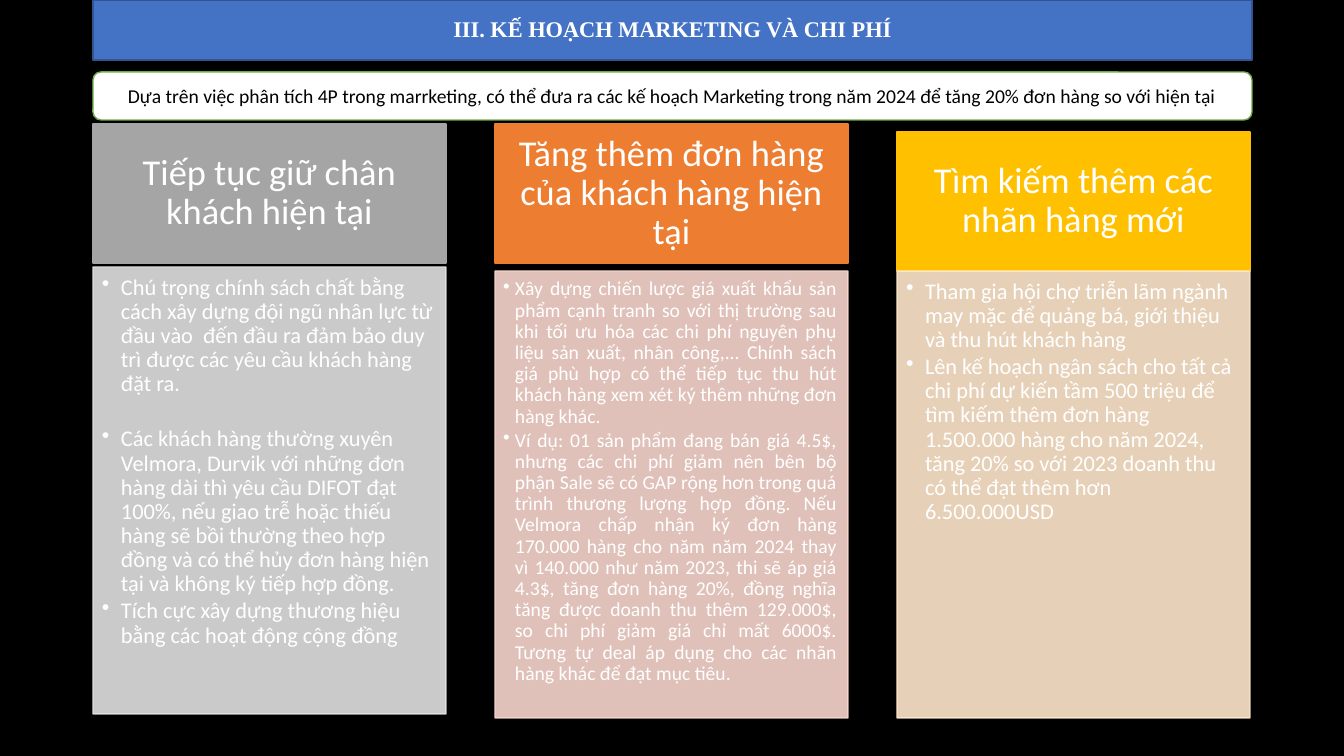
from lxml.etree import SubElement
from pptx import Presentation
from pptx.dml.color import RGBColor
from pptx.enum.shapes import MSO_SHAPE
from pptx.enum.text import MSO_ANCHOR, PP_ALIGN
from pptx.oxml.ns import qn
from pptx.util import Emu, Pt

COLORS = {
    "background": "000000", "white": "FFFFFF", "black": "000000",
    "blue": "4472C4", "blue_line": "325491", "green": "70AD47",
    "gray": "A5A5A5", "gray_light": "E1E1E1",
    "orange": "ED7D31", "orange_light": "F8D7CE",
    "gold": "FFC000", "gold_light": "FFE8CC",
}
SCALE = 914400 / 100.8


def px(length):
    return Emu(round(length * SCALE))


def add_box(kind, box, fill, line, insets, anchor, paragraphs, size, color="white",
            font="Calibri", bold=False, align=PP_ALIGN.CENTER, spacing=0.9):
    shape = slide.shapes.add_shape(kind, *[px(length) for length in box])
    shape.shadow.inherit = False
    shape.fill.solid()
    shape.fill.fore_color.rgb = RGBColor.from_string(COLORS[fill])
    shape.line.color.rgb = RGBColor.from_string(COLORS[line])
    shape.line.width = Pt(1)
    frame = shape.text_frame
    frame.word_wrap = True
    frame.vertical_anchor = anchor
    (frame.margin_left, frame.margin_top,
     frame.margin_right, frame.margin_bottom) = [px(inset) for inset in insets]
    for index, text in enumerate(paragraphs):
        paragraph = frame.add_paragraph() if index else frame.paragraphs[0]
        paragraph.alignment = align
        paragraph.line_spacing = spacing
        run = paragraph.add_run()
        run.text = text
        run.font.size = Pt(size)
        run.font.name = font
        run.font.bold = bold
        run.font.color.rgb = RGBColor.from_string(COLORS[color])
    return shape


presentation = Presentation()
presentation.slide_width = px(1344)
presentation.slide_height = px(756)
slide = presentation.slides.add_slide(presentation.slide_layouts[6])
slide.background.fill.solid()
slide.background.fill.fore_color.rgb = RGBColor.from_string(COLORS["background"])

# Title bar and introduction
LEFT, WIDTH = 93, 1159
add_box(MSO_SHAPE.RECTANGLE, (LEFT, 0, WIDTH, 60), "blue", "blue_line", (10, 5, 10, 5),
        MSO_ANCHOR.MIDDLE, ["III. KẾ HOẠCH MARKETING VÀ CHI PHÍ"], 16,
        font="Times New Roman", bold=True)
add_box(MSO_SHAPE.ROUNDED_RECTANGLE, (LEFT, 72, WIDTH, 48), "white", "green", (10, 5, 10, 5),
        MSO_ANCHOR.MIDDLE,
        ["Dựa trên việc phân tích 4P trong marrketing, có thể đưa ra các kế hoạch Marketing "
         "trong năm 2024 để tăng 20% đơn hàng so với hiện tại"],
        14, color="black", spacing=1.0)

# Columns: color, header top, body top, text size, indent, insets, alignment,
# space after the first point, heading, points
columns = [
    ("gray", 124, 267, 16, 19, (9, 9, 12, 14), PP_ALIGN.LEFT, 22,
     "Tiếp tục giữ chân khách hiện tại",
     ["Chú trọng chính sách chất bằng cách xây dựng đội ngũ nhân lực từ đầu vào  đến đầu ra "
      "đảm bảo duy trì được các yêu cầu khách hàng đặt ra.",
      "Các khách hàng thường xuyên Velmora, Durvik với những đơn hàng dài thì yêu cầu DIFOT đạt "
      "100%, nếu giao trễ hoặc thiếu hàng sẽ bồi thường theo hợp đồng và có thể hủy đơn hàng "
      "hiện tại và không ký tiếp hợp đồng.",
      "Tích cực xây dựng thương hiệu bằng các hoạt động cộng đồng"]),
    ("orange", 124, 271, 14, 12, (8, 8, 11, 12), PP_ALIGN.JUSTIFY, 2,
     "Tăng thêm đơn hàng của khách hàng hiện tại",
     ["Xây dựng chiến lược giá xuất khẩu sản phẩm cạnh tranh so với thị trường sau khi tối ưu "
      "hóa các chi phí nguyên phụ liệu sản xuất, nhân công,... Chính sách giá phù hợp có thể "
      "tiếp tục thu hút khách hàng xem xét ký thêm những đơn hàng khác.",
      "Ví dụ: 01 sản phẩm đang bán giá 4.5$, nhưng các chi phí giảm nên bên bộ phận Sale sẽ có "
      "GAP rộng hơn trong quá trình thương lượng hợp đồng. Nếu Velmora chấp nhận ký đơn hàng "
      "170.000 hàng cho năm năm 2024 thay vì 140.000 như năm 2023, thi sẽ áp giá 4.3$, tăng "
      "đơn hàng 20%, đồng nghĩa tăng được doanh thu thêm 129.000$, so chi phí giảm giá chỉ mất "
      "6000$. Tương tự deal áp dụng cho các nhãn hàng khác để đạt mục tiêu."]),
    ("gold", 132, 271, 16, 19, (9, 9, 12, 14), PP_ALIGN.LEFT, 2,
     "Tìm kiếm thêm các nhãn hàng mới",
     ["Tham gia hội chợ triễn lãm ngành may mặc để quảng bá, giới thiệu và thu hút khách hàng",
      "Lên kế hoạch ngân sách cho tất cả chi phí dự kiến tầm 500 triệu để tìm kiếm thêm đơn "
      "hàng 1.500.000 hàng cho năm 2024, tăng 20% so với 2023 doanh thu có thể đạt thêm hơn "
      "6.500.000USD"]),
]
COLUMN_WIDTH, COLUMN_PITCH = 353, 402
for index, (color, header_top, body_top, size, indent, insets, align,
            first_gap, heading, points) in enumerate(columns):
    left = LEFT + index * COLUMN_PITCH
    add_box(MSO_SHAPE.RECTANGLE, (left, header_top, COLUMN_WIDTH, 139), color, color,
            (20, 12, 20, 12), MSO_ANCHOR.MIDDLE, [heading], 26)
    light = color + "_light"
    body = add_box(MSO_SHAPE.RECTANGLE, (left, body_top, COLUMN_WIDTH, 447), light, light,
                   insets, MSO_ANCHOR.TOP, points, size, align=align)

    # Fill and line at 90 % opacity
    for color_element in body._element.spPr.iter(qn("a:srgbClr")):
        SubElement(color_element, qn("a:alpha"), val="90000")

    # Bullets with a hanging indent
    for number, paragraph in enumerate(body.text_frame.paragraphs):
        paragraph.space_after = Pt(2 if number else first_gap)
        properties = paragraph._p.get_or_add_pPr()
        properties.set("marL", str(px(indent)))
        properties.set("indent", str(-px(indent)))
        SubElement(properties, qn("a:buChar"), char="•")

presentation.save("out.pptx")
